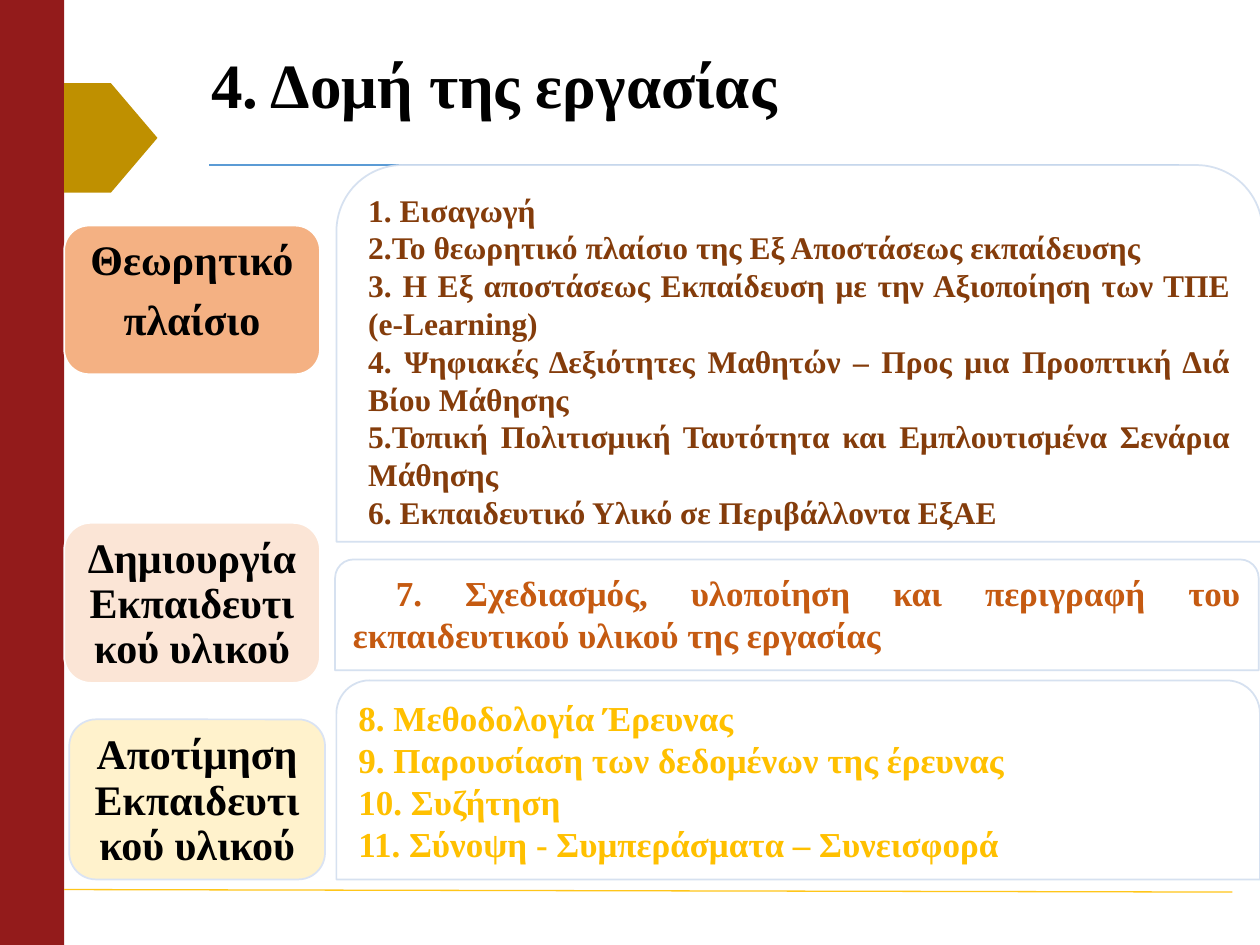
from dataclasses import dataclass
from typing import Any

from lxml import etree
from pptx import Presentation
from pptx import util as u
from pptx.dml.color import RGBColor
from pptx.enum import shapes, text
from pptx.oxml import ns

HUES = {
    "red": "931B1B", "gold": "BF9000", "blue": "5B9BD5", "amber": "FFC61A",
    "white": "FFFFFF", "black": "000000", "pale": "D2DEEF", "ice": "DAE3F3",
    "peach": "F4B183", "blush": "FBE5D6", "cream": "FFF2CC",
    "brown": "843C0B", "rust": "C55A11", "sun": "FFC000",
}
KINDS = shapes.MSO_SHAPE
ALIGN = text.PP_ALIGN
LEFT, MID, JUST = ALIGN.LEFT, ALIGN.CENTER, ALIGN.JUSTIFY
LABEL = {"alignment": MID, "line_spacing": 0.9, "space_after": u.Pt(8.4)}


def hue(name):
    return RGBColor.from_string(HUES[name])


def fade(part, share):
    for tint in part.iter(ns.qn("a:srgbClr")):
        etree.SubElement(tint, ns.qn("a:alpha"), val=str(share * 1000))


@dataclass
class Deck:
    slide: Any
    face: str = "Times New Roman"

    def words(self, frame, lines, size, color, form, anchor=text.MSO_ANCHOR.TOP):
        frame.word_wrap = True
        frame.vertical_anchor = anchor
        for i, line in enumerate(lines):
            para = frame.paragraphs[0] if i == 0 else frame.add_paragraph()
            for key, val in form.items():
                setattr(para, key, val)
            run = para.add_run()
            run.text = line
            look = {"name": self.face, "size": u.Pt(size), "bold": True}
            for key, val in look.items():
                setattr(run.font, key, val)
            run.font.color.rgb = hue(color)

    def shape(self, kind, box, fill, edge=None):
        item = self.slide.shapes.add_shape(kind, *map(u.Inches, box))
        item.shadow.inherit = False
        item.fill.solid()
        item.fill.fore_color.rgb = hue(fill)
        if edge:
            item.line.color.rgb = hue(edge)
            item.line.width = u.Pt(1)
        else:
            item.line.fill.background()
        return item

    def title(self, box, line):
        item = self.slide.shapes.add_textbox(*map(u.Inches, box))
        self.words(item.text_frame, [line], 36, "black",
                   {"line_spacing": 0.9}, text.MSO_ANCHOR.MIDDLE)

    def label(self, box, fill, edge, lines):
        item = self.shape(KINDS.FLOWCHART_ALTERNATE_PROCESS, box, fill, edge)
        self.words(item.text_frame, lines, 24, "black", LABEL)

    def panel(self, box, lines, size, color, align, bend=0.1667):
        item = self.shape(KINDS.ROUND_2_SAME_RECTANGLE, box, "white", "pale")
        item.adjustments[0] = bend
        fade(item.element.spPr, 90)
        self.words(item.text_frame, lines, size, color, {"alignment": align})

    def rule(self, ends, color):
        line = self.slide.shapes.add_connector(
            shapes.MSO_CONNECTOR.STRAIGHT, *map(u.Inches, ends))
        line.line.color.rgb = hue(color)
        line.line.width = u.Pt(0.75)
        etree.SubElement(line.element.spPr, ns.qn("a:effectLst"))


def main():
    show = Presentation()
    show.slide_width, show.slide_height = u.Inches(10), u.Inches(7.5)
    deck = Deck(show.slides.add_slide(show.slide_layouts[6]))

    deck.shape(KINDS.RECTANGLE, (0, 0, 0.51, 7.5), "red")
    deck.rule((1.66, 1.31, 9.36, 1.31), "blue")
    deck.rule((0.51, 7.06, 9.78, 7.08), "amber")
    deck.shape(KINDS.PENTAGON, (0.51, 0.66, 0.74, 0.87), "gold")
    deck.title((1.58, 0.28, 7.87, 0.84), "4. Δομή της εργασίας")

    deck.label((0.51, 1.79, 2.03, 1.18), "peach", "white",
               ["Θεωρητικό", "πλαίσιο"])
    deck.panel((2.67, 1.31, 7.35, 2.99), [
        "1. Εισαγωγή",
        "2.Το θεωρητικό πλαίσιο της Εξ Αποστάσεως εκπαίδευσης",
        "3. Η Εξ αποστάσεως Εκπαίδευση με την Αξιοποίηση των ΤΠΕ (e-Learning)",
        "4. Ψηφιακές Δεξιότητες Μαθητών – Προς μια Προοπτική Διά Βίου Μάθησης",
        "5.Τοπική Πολιτισμική Ταυτότητα και Εμπλουτισμένα Σενάρια Μάθησης",
        "6. Εκπαιδευτικό Υλικό σε Περιβάλλοντα ΕξΑΕ",
    ], 18, "brown", JUST, 0.176)

    deck.label((0.51, 4.15, 2.03, 1.27), "blush", "white",
               ["Δημιουργία Εκπαιδευτικού υλικού"])
    deck.panel((2.66, 4.44, 7.33, 0.88), [
        " 7. Σχεδιασμός, υλοποίηση και περιγραφή του εκπαιδευτικού υλικού "
        "της εργασίας",
    ], 20, "rust", JUST)

    deck.label((0.55, 5.71, 2.03, 1.27), "cream", "ice",
               ["Αποτίμηση Εκπαιδευτικού υλικού"])
    deck.panel((2.67, 5.4, 7.33, 1.58), [
        "8. Μεθοδολογία Έρευνας",
        "9. Παρουσίαση των δεδομένων της έρευνας",
        "10. Συζήτηση",
        "11. Σύνοψη - Συμπεράσματα – Συνεισφορά",
    ], 20, "sun", LEFT)

    show.save("out.pptx")


if __name__ == "__main__":
    main()
